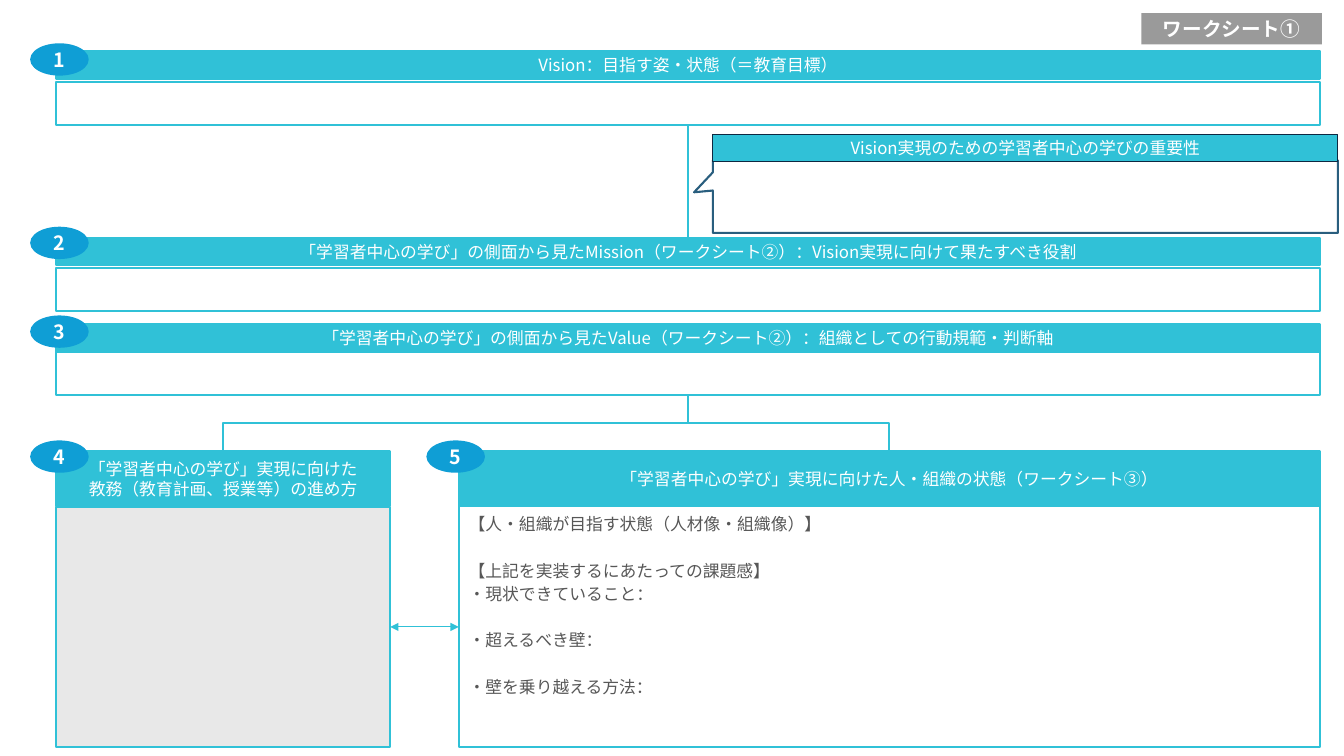
from dataclasses import dataclass

from pptx import Presentation
from pptx.dml.color import RGBColor
from pptx.enum import shapes, text
from pptx.oxml import ns, xmlchemy
from pptx.util import Inches, Pt


@dataclass(frozen=True)
class Theme:
    font: str = "Noto Sans CJK JP"
    teal: str = "30C1D7"
    badge: str = "0F9ED5"
    tag: str = "9A9A9A"
    panel: str = "E8E8E8"
    white: str = "FFFFFF"
    body: str = "575757"
    callout_line: str = "295E7E"
    callout_title_line: str = "0E2841"
    text_size: int = 12
    label_size: int = 14
    line: float = 1.5
    thin_line: float = 0.75


THEME = Theme()
SHAPE = shapes.MSO_SHAPE
CONNECTOR = shapes.MSO_CONNECTOR
LEFT, FULL_WIDTH = 0.56, 12.53
CENTER_X = 6.82
BODY_LINE_GAP = 16.6


def rgb(color):
    return RGBColor.from_string(color)


def add_block(slide, box, fill, line=None, width=THEME.line, kind=SHAPE.RECTANGLE):
    block = slide.shapes.add_shape(kind, *map(Inches, box))
    block.shadow.inherit = False
    block.fill.solid()
    block.fill.fore_color.rgb = rgb(fill)
    if line:
        block.line.color.rgb = rgb(line)
        block.line.width = Pt(width)
    else:
        block.line.fill.background()
    return block


def write(block, lines, size=THEME.text_size, color=THEME.white, bold=False,
          align=text.PP_ALIGN.CENTER, anchor=text.MSO_ANCHOR.MIDDLE):
    """Fill the block with one paragraph per line and return the paragraphs."""
    frame = block.text_frame
    frame.text = "\n".join(lines)
    frame.word_wrap = True
    frame.vertical_anchor = anchor
    for paragraph in frame.paragraphs:
        paragraph.alignment = align
        for run in paragraph.runs:
            run.font.size = Pt(size)
            run.font.bold = bold
            run.font.name = THEME.font
            run.font.color.rgb = rgb(color)
            east_asian = xmlchemy.OxmlElement("a:ea")
            east_asian.set("typeface", THEME.font)
            run.font._element.find(ns.qn("a:latin")).addnext(east_asian)
    return frame.paragraphs


def add_section(slide, left, top, width, title_height, body_top, body_height,
                title, body_fill=THEME.white):
    """Add a teal title bar with an outlined body under it; return the body."""
    bar = add_block(slide, (left, top, width, title_height), THEME.teal, THEME.teal)
    write(bar, title)
    return add_block(slide, (left, body_top, width, body_height), body_fill, THEME.teal)


def add_badge(slide, number, left, top):
    badge = add_block(slide, (left, top, 0.56, 0.3), THEME.badge, THEME.badge,
                      kind=SHAPE.FLOWCHART_CONNECTOR)
    frame = badge.text_frame
    frame.margin_left = frame.margin_right = Inches(0)
    write(badge, [str(number)], THEME.label_size, bold=True)


def add_line(slide, start, end, width=THEME.line, kind=CONNECTOR.STRAIGHT):
    line = slide.shapes.add_connector(kind, *map(Inches, (*start, *end)))
    line.line.color.rgb = rgb(THEME.teal)
    line.line.width = Pt(width)
    line._element.spPr.append(xmlchemy.OxmlElement("a:effectLst"))
    return line


def add_branch(slide, start, end):
    """Add an elbow that leaves start downwards and enters end from above."""
    (x1, y1), (x2, y2) = start, end
    middle_x, middle_y = (x1 + x2) / 2, (y1 + y2) / 2
    half_width, half_height = (y2 - y1) / 2, abs(x2 - x1) / 2
    side = 1 if x2 > x1 else -1
    elbow = add_line(slide,
                     (middle_x + side * half_width, middle_y - half_height),
                     (middle_x - side * half_width, middle_y + half_height),
                     kind=CONNECTOR.ELBOW)
    degrees = 270 if side > 0 else 90
    elbow._element.spPr.find(ns.qn("a:xfrm")).set("rot", str(degrees * 60000))


def add_double_arrow(slide, start, end):
    arrow = add_line(slide, start, end, THEME.thin_line)
    outline = arrow.line._get_or_add_ln()
    for tag in ("a:headEnd", "a:tailEnd"):
        tip = xmlchemy.OxmlElement(tag)
        tip.set("type", "triangle")
        outline.append(tip)


def add_callout(slide, left, top, width, title):
    bubble = add_block(slide, (left, top + 0.26, width, 0.72), THEME.white,
                       THEME.callout_line, kind=SHAPE.RECTANGULAR_CALLOUT)
    bubble.adjustments[0] = -0.53
    bubble.adjustments[1] = -0.059
    bar = add_block(slide, (left, top, width, 0.27), THEME.teal,
                    THEME.callout_title_line, THEME.thin_line)
    write(bar, [title])


def write_state_prompts(panel):
    prompts = [
        "【人・組織が目指す状態（人材像・組織像）】",
        "【上記を実装するにあたっての課題感】",
        "・現状できていること：",
        "・超えるべき壁：",
        "・壁を乗り越える方法：",
    ]
    paragraphs = write(panel, prompts, color=THEME.body,
                       align=text.PP_ALIGN.LEFT, anchor=text.MSO_ANCHOR.TOP)
    for index, paragraph in enumerate(paragraphs):
        paragraph.line_spacing = 1.15
        if index in (1, 3, 4):
            paragraph.space_before = Pt(BODY_LINE_GAP)


def main():
    deck = Presentation()
    deck.slide_width, deck.slide_height = Inches(13.33), Inches(7.5)
    slide = deck.slides.add_slide(deck.slide_layouts[6])

    tag = add_block(slide, (11.32, 0.13, 1.79, 0.31), THEME.tag)
    write(tag, ["ワークシート①"], THEME.label_size, bold=True)

    add_line(slide, (CENTER_X, 1.24), (CENTER_X, 2.36))
    for end_x in (8.82, 2.21):
        add_branch(slide, (CENTER_X, 3.92), (end_x, 4.48))

    bands = [
        (0.51, 0.81, "Vision：目指す姿・状態（＝教育目標）"),
        (2.36, 2.66, "「学習者中心の学び」の側面から見たMission（ワークシート②）："
                     "Vision実現に向けて果たすべき役割"),
        (3.22, 3.49, "「学習者中心の学び」の側面から見たValue（ワークシート②）："
                     "組織としての行動規範・判断軸"),
    ]
    for top, body_top, title in bands:
        add_section(slide, LEFT, top, FULL_WIDTH, 0.27, body_top, 0.43, [title])

    add_callout(slide, 7.07, 1.33, 6.2, "Vision実現のための学習者中心の学びの重要性")

    add_section(slide, LEFT, 4.48, 3.31, 0.54, 5.03, 2.38,
                ["「学習者中心の学び」実現に向けた", "教務（教育計画、授業等）の進め方"],
                THEME.panel)
    state_panel = add_section(
        slide, 4.55, 4.48, 8.54, 0.54, 5.02, 2.39,
        ["「学習者中心の学び」実現に向けた人・組織の状態（ワークシート③）"])
    write_state_prompts(state_panel)
    add_double_arrow(slide, (3.87, 6.22), (4.55, 6.22))

    badge_spots = [(0.31, 0.44), (0.31, 2.26), (0.31, 3.14), (0.31, 4.38), (4.24, 4.38)]
    for number, (left, top) in enumerate(badge_spots, start=1):
        add_badge(slide, number, left, top)

    deck.save("out.pptx")


if __name__ == "__main__":
    main()
